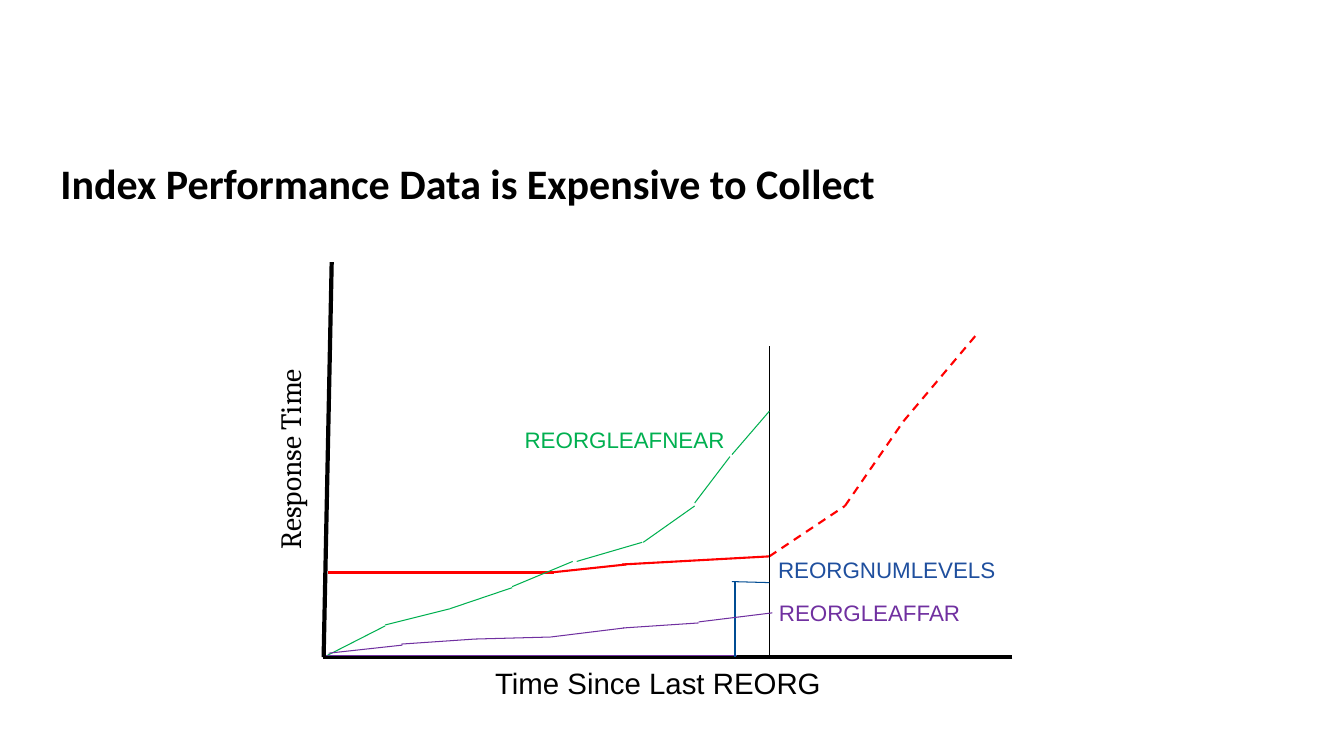
from lxml import etree
from pptx import Presentation
from pptx.dml.color import RGBColor
from pptx.enum.dml import MSO_LINE
from pptx.enum.shapes import MSO_CONNECTOR
from pptx.enum.text import MSO_ANCHOR, MSO_AUTO_SIZE, PP_ALIGN
from pptx.oxml.ns import qn
from pptx.util import Inches, Pt

BLACK, RED, GREEN = "000000", "FF0000", "00B050"
PURPLE, BLUE, LABEL_BLUE = "7030A0", "004C93", "1F4F9E"


def rgb(value):
    return RGBColor.from_string(value)


def write(tf, text, **font):
    p = tf.paragraphs[0]
    r = p.add_run()
    r.text = text
    r.font.color.rgb = rgb(font.pop("color"))
    for name, value in font.items():
        setattr(r.font, name, value)
    return p


prs = Presentation()
prs.slide_width, prs.slide_height = Inches(13.33), Inches(7.5)
s = prs.slides.add_slide(prs.slide_layouts[5])

# Title
title = s.shapes.title
title.left, title.top = Inches(0.5), Inches(1.41)
title.width, title.height = Inches(10.72), Inches(0.87)
tf = title.text_frame
tf.word_wrap, tf.auto_size = True, MSO_AUTO_SIZE.NONE
tf.vertical_anchor = MSO_ANCHOR.MIDDLE
p = write(tf, "Index Performance Data is Expensive to Collect",
          size=Pt(30), name="Calibri", bold=True, color=BLACK)
p.alignment, p.line_spacing = PP_ALIGN.LEFT, 0.9

# Axes and curves: colour, width, dash, segments (x1, y1, x2, y2)
curves = [
    # Axes
    (BLACK, 3, None, [(3.29, 2.6, 3.21, 6.52), (10.04, 6.52, 3.2, 6.52)]),
    # Response time, measured and then projected
    (RED, 1.5, None, [(3.25, 5.68, 5.49, 5.68), (5.46, 5.68, 6.21, 5.6),
                      (6.17, 5.6, 7.63, 5.52)]),
    (RED, 1.5, MSO_LINE.DASH, [(7.63, 5.52, 8.38, 5.02), (8.38, 5.02, 8.96, 4.18),
                               (8.96, 4.18, 9.71, 3.29)]),
    # Reorganisation point
    (BLACK, 0.75, None, [(7.63, 6.52, 7.63, 3.43)]),
    # REORGNUMLEVELS: flat, then a step
    (PURPLE, 0.75, None, [(3.23, 6.5, 7.31, 6.5)]),
    (BLUE, 0.75, None, [(7.29, 6.52, 7.29, 5.77), (7.26, 5.77, 7.63, 5.78)]),
    # REORGLEAFNEAR
    (GREEN, 0.75, None, [(3.25, 6.5, 3.82, 6.21), (3.82, 6.2, 4.46, 6.04),
                         (4.46, 6.04, 5.08, 5.83), (5.08, 5.82, 5.68, 5.57),
                         (5.72, 5.57, 6.37, 5.38), (6.38, 5.38, 6.89, 5.02),
                         (6.89, 4.99, 7.24, 4.53), (7.26, 4.51, 7.63, 4.08)]),
    # REORGLEAFFAR
    (PURPLE, 0.75, None, [(3.26, 6.48, 3.99, 6.4), (3.98, 6.39, 4.71, 6.34),
                          (4.71, 6.34, 5.46, 6.32), (5.46, 6.32, 6.19, 6.23),
                          (6.18, 6.23, 6.93, 6.18), (6.93, 6.17, 7.66, 6.08)]),
]
for color, width, dash, segments in curves:
    for segment in segments:
        line = s.shapes.add_connector(MSO_CONNECTOR.STRAIGHT, *map(Inches, segment))
        line.line.color.rgb = rgb(color)
        line.line.width = Pt(width)
        if dash:
            line.line.dash_style = dash
        etree.SubElement(line._element.spPr, qn("a:effectLst"))

# Axis titles and curve labels: text, box, size, font, colour, rotation
labels = [
    ("Response Time", (1.61, 4.32, 2.54, 0.47), 21, "Cambria", BLACK, 270),
    ("Time Since Last REORG", (4.67, 6.55, 3.71, 0.47), 21, "Arial", BLACK, 0),
    ("REORGNUMLEVELS", (7.5, 5.47, 2.59, 0.38), 16, "Arial", LABEL_BLUE, 0),
    ("REORGLEAFNEAR", (4.9, 4.18, 2.59, 0.38), 16, "Arial", GREEN, 0),
    ("REORGLEAFFAR", (7.54, 5.89, 2.17, 0.38), 16, "Arial", PURPLE, 0),
]
for text, box, size, font, color, rotation in labels:
    sp = s.shapes.add_textbox(*map(Inches, box))
    sp.rotation = rotation
    tf = sp.text_frame
    tf.word_wrap, tf.auto_size = True, MSO_AUTO_SIZE.SHAPE_TO_FIT_TEXT
    p = write(tf, text, size=Pt(size), name=font, color=color)
    p.alignment = PP_ALIGN.CENTER

prs.save("out.pptx")
